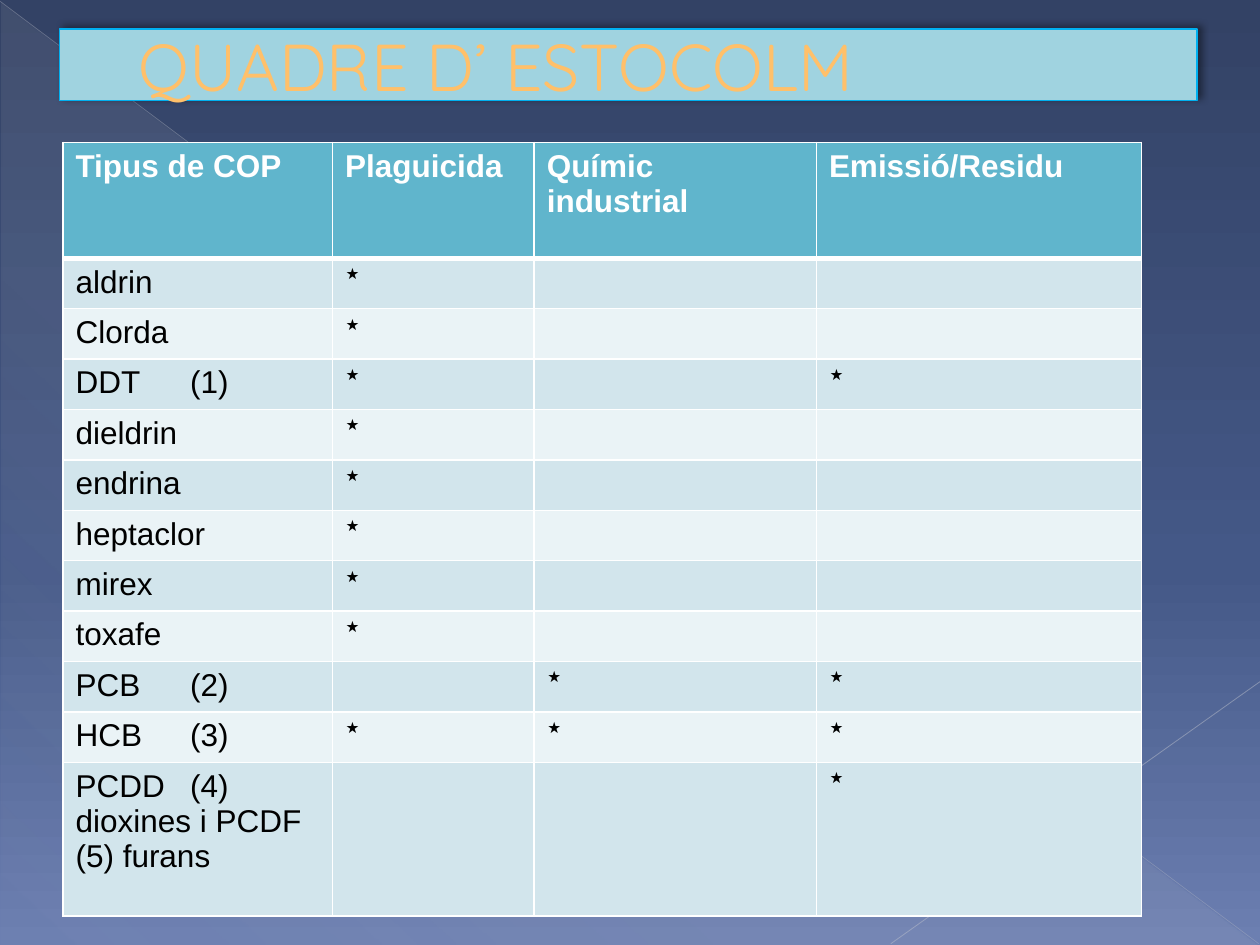
"""Build the Stockholm table slide of persistent organic pollutants."""
from dataclasses import dataclass

from lxml import etree
from pptx import Presentation, util as u
from pptx.dml.color import RGBColor
from pptx.enum import shapes, text
from pptx.oxml import ns

WHITE = RGBColor(0xFF, 0xFF, 0xFF)
BLACK = RGBColor(0, 0, 0)
HEAD = RGBColor(0x60, 0xB5, 0xCC)
BANDS = (RGBColor(0xD2, 0xE5, 0xEC), RGBColor(0xEA, 0xF3, 0xF6))
AQUA = RGBColor(0xA0, 0xD3, 0xE0)
SKY = RGBColor(0x00, 0xB0, 0xF0)
GOLD = RGBColor(0xFF, 0xC0, 0x6A)
BROWN = RGBColor(0xA6, 0x78, 0x00)
MIST = RGBColor(0xD4, 0xD4, 0xD6)
NIGHT = RGBColor(0x33, 0x42, 0x65)
DUSK = RGBColor(0x44, 0x58, 0x87)
DAWN = RGBColor(0x6C, 0x7F, 0xB1)
STAR = "٭"


@dataclass
class Stop:
    """A gradient stop; place and opacity are percentages."""
    place: int
    color: RGBColor
    alpha: int = 100


@dataclass
class Ray:
    """A thin decorative line."""
    start: tuple[float, float]
    end: tuple[float, float]
    color: RGBColor
    width: float
    alpha: int


@dataclass
class Entry:
    """A table row: its label and its starred columns."""
    label: str
    stars: tuple[int, ...] = (1,)
    height: float = 0.4


RAYS = (
    Ray((0, 0.01), (9.99, 7.49), RGBColor(0xB9, 0xBD, 0xC8), 0.39, 35),
    Ray((10, 5.41), (7.07, 7.49), RGBColor(0xC1, 0xC4, 0xCE), 0.47, 45),
)
TITLES = ("Tipus de COP", "Plaguicida", "Químic industrial", "Emissió/Residu")
WIDTHS = (2.14, 1.6, 2.24, 2.58)
TOP = 0.92
ENTRIES = (
    Entry("aldrin"),
    Entry("Clorda"),
    Entry("DDT\t(1)", (1, 3)),
    Entry("dieldrin"),
    Entry("endrina"),
    Entry("heptaclor"),
    Entry("mirex"),
    Entry("toxafe"),
    Entry("PCB\t(2)", (2, 3)),
    Entry("HCB\t(3)", (1, 2, 3)),
    Entry("PCDD\t(4) dioxines i PCDF (5) furans", (3,), 1.22),
)


def add(parent, tag: str, **attrs):
    """Append a drawing element with the given attributes."""
    return etree.SubElement(parent, ns.qn(f"a:{tag}"), {k: str(v) for k, v in attrs.items()})


def tint(parent, color: RGBColor, alpha: int = 100) -> None:
    """Append a colour with an opacity."""
    node = add(parent, "srgbClr", val=color)
    if alpha < 100:
        add(node, "alpha", val=alpha * 1000)


def blend(parent, stops: tuple[Stop, ...], angle: int) -> None:
    """Replace a solid fill with a linear gradient."""
    old = parent.find(ns.qn("a:solidFill"))
    grad = add(parent, "gradFill", rotWithShape=1)
    row = add(grad, "gsLst")
    for stop in stops:
        tint(add(row, "gs", pos=stop.place * 1000), stop.color, stop.alpha)
    add(grad, "lin", ang=angle * 60000, scaled=0)
    parent.replace(old, grad)


def draw_back(slide) -> None:
    """Draw the gradient background, the wedge and the rays."""
    slide.background.fill.solid()
    page = next(slide.element.iter(ns.qn("p:bgPr")))
    blend(page, (Stop(0, NIGHT), Stop(60, DUSK), Stop(100, DAWN)), 90)
    wedge = slide.shapes.add_shape(
        shapes.MSO_SHAPE.RIGHT_TRIANGLE,
        u.Inches(0.01), u.Inches(0.02), u.Inches(9.98), u.Inches(7.48))
    wedge.shadow.inherit = False
    wedge.line.fill.background()
    wedge.fill.solid()
    blend(wedge.element.spPr, (Stop(0, MIST, 10), Stop(70, MIST, 8), Stop(100, MIST, 1)), 133)
    for ray in RAYS:
        draw_ray(slide, ray)


def draw_ray(slide, ray: Ray) -> None:
    """Draw one translucent line."""
    ends = [u.Inches(n) for n in ray.start + ray.end]
    line = slide.shapes.add_connector(shapes.MSO_CONNECTOR.STRAIGHT, *ends)
    line.line.width = u.Pt(ray.width)
    line.line.color.rgb = ray.color
    add(next(line.element.iter(ns.qn("a:srgbClr"))), "alpha", val=ray.alpha * 1000)
    add(line.element.spPr, "effectLst")


def draw_title(slide) -> None:
    """Draw the title bar with its shadow and outlined text."""
    bar = slide.shapes.add_shape(
        shapes.MSO_SHAPE.RECTANGLE,
        u.Inches(0.47), u.Inches(0.23), u.Inches(9.03), u.Inches(0.57))
    bar.fill.solid()
    bar.fill.fore_color.rgb = AQUA
    bar.line.color.rgb = SKY
    bar.line.width = u.Pt(0.75)
    bar.shadow.inherit = False
    glow = add(bar.element.spPr.find(ns.qn("a:effectLst")), "outerShdw",
               blurRad=u.Pt(4), dist=u.Pt(3), dir=315 * 60000, algn="ctr", rotWithShape=0)
    tint(glow, BLACK, 40)
    frame = bar.text_frame
    frame.word_wrap = True
    frame.margin_left = u.Inches(0.63)
    frame.vertical_anchor = text.MSO_ANCHOR.MIDDLE
    para = frame.paragraphs[0]
    para.alignment = text.PP_ALIGN.LEFT
    run = para.add_run()
    run.text = "QUADRE D’ ESTOCOLM"
    run.font.name, run.font.size = "Quicksand", u.Pt(37.8)
    run.font.color.rgb = GOLD
    props = run.font._element
    edge = add(props, "ln", w=u.Pt(0.5))
    tint(add(edge, "solidFill"), BROWN)
    props.insert(0, edge)


def fill_cell(cell, words: str, back: RGBColor, ink: RGBColor, bold: bool,
              above: int, below: int) -> None:
    """Set the text, fill and white borders of a cell."""
    cell.text = words
    para = cell.text_frame.paragraphs[0]
    font = para.font
    font.name, font.size, font.bold = "Arial", u.Pt(18), bold
    font.color.rgb = ink
    if "\t" in words:
        props = para._p.get_or_add_pPr()
        tabs = add(props, "tabLst")
        add(tabs, "tab", pos=u.Inches(0.91), algn="l")
        props.insert(0, tabs)
    cell.fill.solid()
    cell.fill.fore_color.rgb = back
    props = cell._tc.get_or_add_tcPr()
    sides = (("lnL", 1), ("lnR", 1), ("lnT", above), ("lnB", below))
    for spot, (side, width) in enumerate(sides):
        edge = add(props, side, w=u.Pt(width))
        tint(add(edge, "solidFill"), WHITE)
        props.insert(spot, edge)


def draw_table(slide) -> None:
    """Draw the table of pollutants."""
    highs = (TOP, *(entry.height for entry in ENTRIES))
    table = slide.shapes.add_table(
        len(highs), len(WIDTHS), u.Inches(0.5), u.Inches(1.13),
        u.Inches(sum(WIDTHS)), u.Inches(sum(highs))).table
    for column, width in zip(table.columns, WIDTHS):
        column.width = u.Inches(width)
    for row, high in zip(table.rows, highs):
        row.height = u.Inches(high)
    for col, title in enumerate(TITLES):
        fill_cell(table.cell(0, col), title, HEAD, WHITE, True, 1, 3)
    for row, entry in enumerate(ENTRIES, 1):
        for col in range(len(WIDTHS)):
            words = entry.label if col == 0 else STAR if col in entry.stars else ""
            fill_cell(table.cell(row, col), words, BANDS[(row - 1) % 2], BLACK, False,
                      3 if row == 1 else 1, 1)


def main() -> None:
    """Build and save the slide."""
    deck = Presentation()
    deck.slide_width, deck.slide_height = u.Inches(10), u.Inches(7.5)
    slide = deck.slides.add_slide(deck.slide_layouts[6])
    draw_back(slide)
    draw_title(slide)
    draw_table(slide)
    deck.save("out.pptx")


if __name__ == "__main__":
    main()
